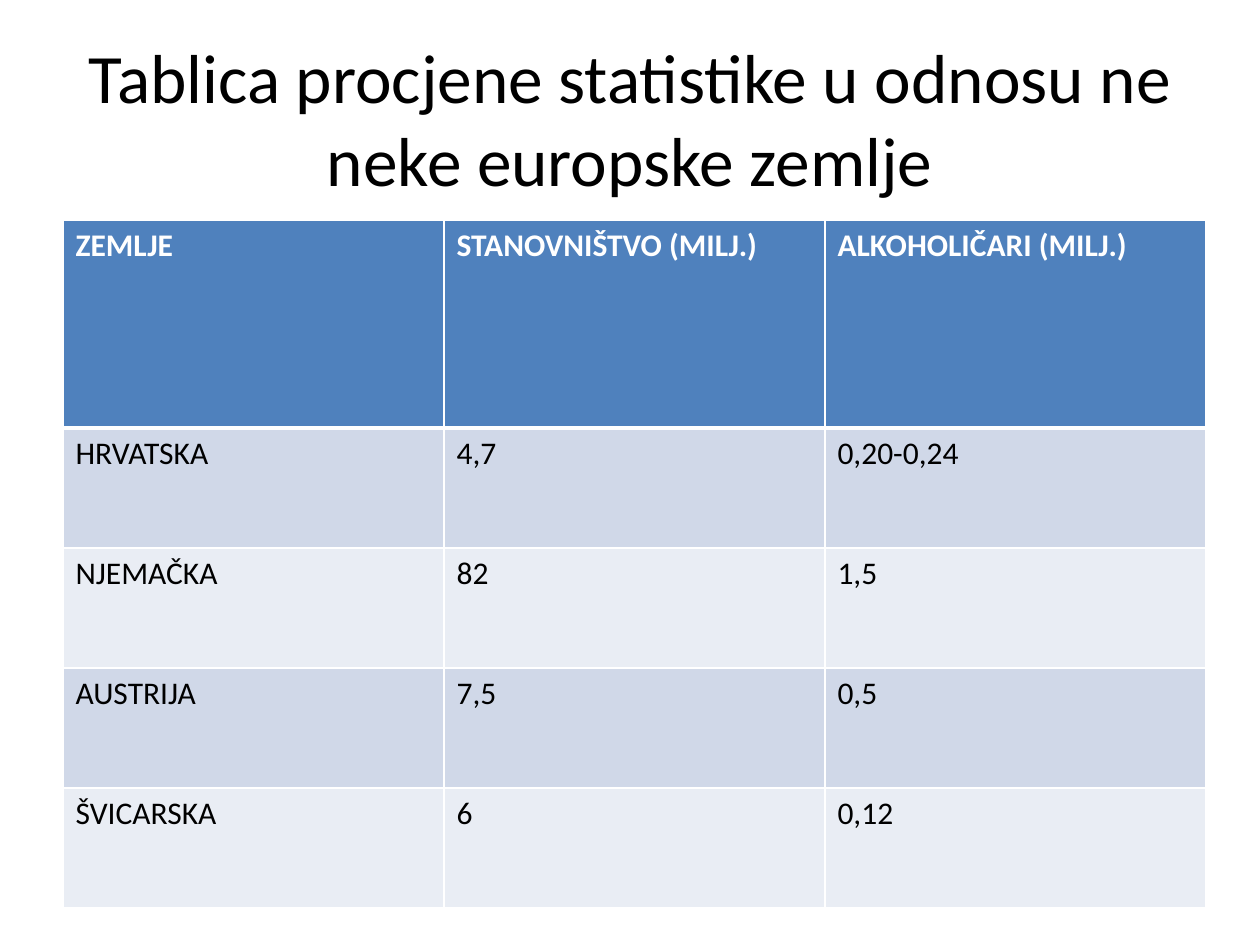
"""Build a slide with a title and a table of estimates by country."""
from dataclasses import dataclass

from lxml import etree
from pptx import Presentation
from pptx import util as u
from pptx.dml.color import RGBColor
from pptx.enum import text
from pptx.oxml import ns


@dataclass(frozen=True)
class Theme:
    font: str = "Calibri"
    ink: str = "000000"
    white: str = "FFFFFF"
    head: str = "4F81BD"
    bands: tuple = ("D0D8E8", "E9EDF4")
    title: float = 39.6
    body: float = 18
    thin: float = 1
    thick: float = 3


ROWS = [
    ("ZEMLJE", "STANOVNIŠTVO (MILJ.)", "ALKOHOLIČARI (MILJ.)"),
    ("HRVATSKA", "4,7", "0,20-0,24"),
    ("NJEMAČKA", "82", "1,5"),
    ("AUSTRIJA", "7,5", "0,5"),
    ("ŠVICARSKA", "6", "0,12"),
]


def px(n):
    return u.Emu(round(n * 914400 / 126))


class Deck:
    def __init__(self, theme, wide, high):
        self.theme = theme
        self.file = Presentation()
        self.file.slide_width, self.file.slide_height = px(wide), px(high)
        self.slide = self.file.slides.add_slide(self.file.slide_layouts[6])

    def label(self, frame, words, size, color, bold=False):
        run = frame.paragraphs[0].add_run()
        run.text = words
        form = {"name": self.theme.font, "size": u.Pt(size), "bold": bold}
        for key, val in form.items():
            setattr(run.font, key, val)
        run.font.color.rgb = RGBColor.from_string(color)

    def title(self, words, *box):
        frame = self.slide.shapes.add_textbox(*map(px, box)).text_frame
        form = {"word_wrap": True, "vertical_anchor": text.MSO_ANCHOR.MIDDLE}
        for key, val in form.items():
            setattr(frame, key, val)
        self.label(frame, words, self.theme.title, self.theme.ink)
        frame.paragraphs[0].alignment = text.PP_ALIGN.CENTER

    def edge(self, cell, side, size):
        props = cell._tc.get_or_add_tcPr()
        line = etree.SubElement(props, ns.qn(f"a:ln{side}"), w=str(u.Pt(size)))
        fill = etree.SubElement(line, ns.qn("a:solidFill"))
        etree.SubElement(fill, ns.qn("a:srgbClr"), val=self.theme.white)

    def cell(self, cell, words, row):
        look = self.theme
        top = row == 0
        sizes = {"L": look.thin, "R": look.thin,
                 "T": look.thick if row == 1 else look.thin,
                 "B": look.thick if top else look.thin}
        for side, size in sizes.items():
            self.edge(cell, side, size)
        cell.fill.solid()
        tint = look.head if top else look.bands[(row - 1) % 2]
        cell.fill.fore_color.rgb = RGBColor.from_string(tint)
        color = look.white if top else look.ink
        self.label(cell.text_frame, words, look.body, color, top)

    def table(self, rows, left, top, wide, highs):
        cols = len(rows[0])
        box = map(px, (left, top, wide * cols, sum(highs)))
        grid = self.slide.shapes.add_table(len(rows), cols, *box).table
        for col in grid.columns:
            col.width = px(wide)
        for r, (high, line) in enumerate(zip(highs, rows)):
            grid.rows[r].height = px(high)
            for c, words in enumerate(line):
                self.cell(grid.cell(r, c), words, r)


def main():
    deck = Deck(Theme(), 1260, 945)
    deck.title("Tablica procjene statistike u odnosu ne neke europske zemlje",
               63, 38, 1134, 158)
    deck.table(ROWS, 63, 220, 381, [208] + [120] * 4)
    deck.file.save("out.pptx")


if __name__ == "__main__":
    main()
